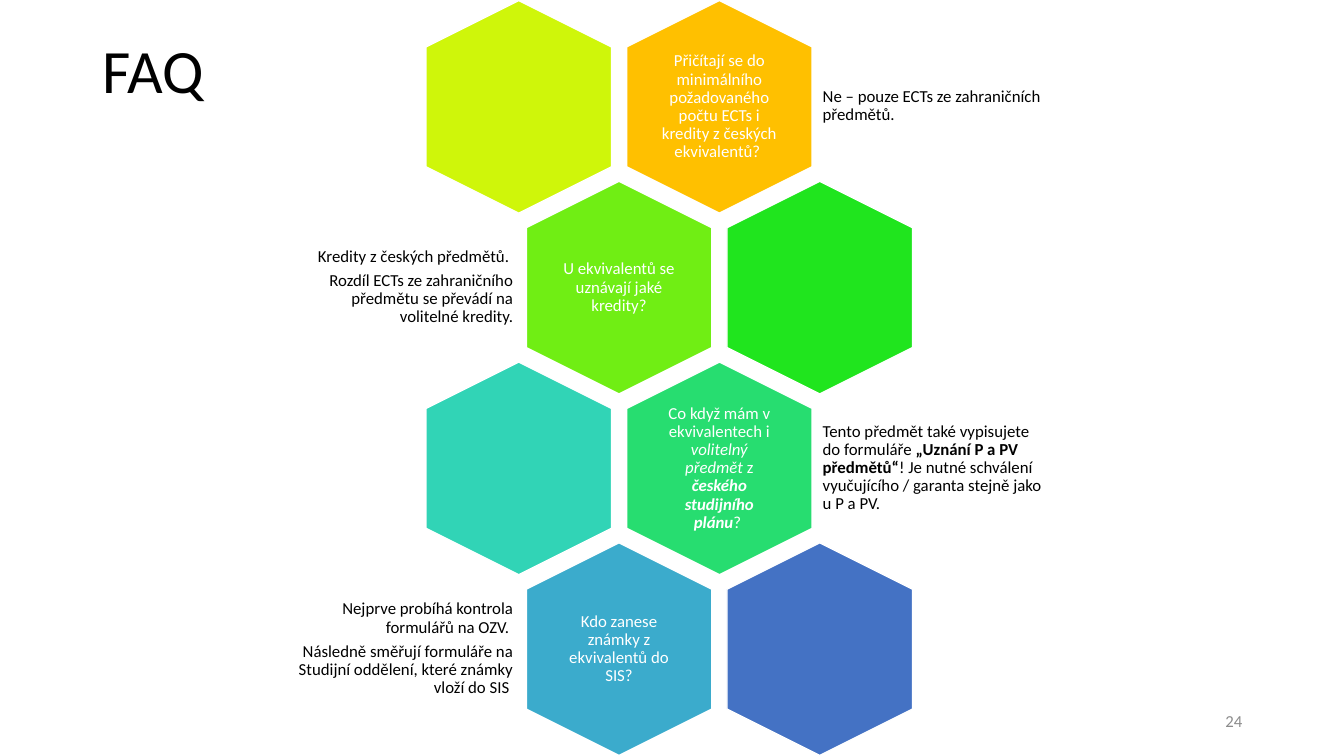
from dataclasses import dataclass

from pptx import Presentation
from pptx.dml.color import RGBColor
from pptx.enum.shapes import MSO_SHAPE
from pptx.enum.text import MSO_ANCHOR, PP_ALIGN
from pptx.slide import Slide
from pptx.util import Inches, Pt

# Colours
BLACK = RGBColor(0x00, 0x00, 0x00)
WHITE = RGBColor(0xFF, 0xFF, 0xFF)
GREY = RGBColor(0x8C, 0x8C, 0x8C)
AMBER = RGBColor(0xFF, 0xC0, 0x00)
YELLOW = RGBColor(0xCF, 0xF6, 0x0A)
LIME = RGBColor(0x70, 0xEE, 0x14)
GREEN = RGBColor(0x20, 0xE5, 0x1E)
EMERALD = RGBColor(0x27, 0xDD, 0x70)
TURQUOISE = RGBColor(0x31, 0xD4, 0xB6)
SKY = RGBColor(0x3B, 0xAB, 0xCC)
BLUE = RGBColor(0x44, 0x72, 0xC4)

# Honeycomb measures in inches
HEXAGON_WIDTH, HEXAGON_HEIGHT = 2.11, 1.84
FIRST_LEFT, FIRST_TOP, LAST_TOP = 4.09, 0.14, 5.52
COLUMN_STEP = 1.99
ROW_SHIFT = COLUMN_STEP / 2


@dataclass
class Run:
    text: str
    bold: bool = False
    italic: bool = False


@dataclass
class Box:
    left: float
    top: float
    width: float
    height: float


@dataclass
class TextStyle:
    size: float = 12
    color: RGBColor = BLACK
    alignment: PP_ALIGN = PP_ALIGN.LEFT
    line_spacing: float = 0.9
    space_after: float = 4.2
    margin_x: float = 0.05
    margin_y: float = 0.05


@dataclass
class Row:
    question: list[Run]
    answer: list[list[Run]]
    question_color: RGBColor
    empty_color: RGBColor


ROWS = [
    Row(
        [Run("Přičítají se do minimálního požadovaného počtu ECTs i kredity z českých ekvivalentů? ")],
        [[Run("Ne – pouze ECTs ze zahraničních předmětů.")]],
        AMBER, YELLOW,
    ),
    Row(
        [Run("U ekvivalentů se uznávají jaké kredity?")],
        [
            [Run("Kredity z českých předmětů. ")],
            [Run("Rozdíl ECTs ze zahraničního předmětu se převádí na volitelné kredity.")],
        ],
        LIME, GREEN,
    ),
    Row(
        [
            Run("Co když mám v ekvivalentech i "),
            Run("volitelný předmět ", italic=True),
            Run("z "),
            Run("českého studijního plánu", bold=True, italic=True),
            Run("? "),
        ],
        [[
            Run("Tento předmět také vypisujete do formuláře "),
            Run("„Uznání P a PV předmětů“", bold=True),
            Run("! Je nutné schválení vyučujícího / garanta stejně jako u P a PV."),
        ]],
        EMERALD, TURQUOISE,
    ),
    Row(
        [Run("Kdo zanese známky z ekvivalentů do SIS?")],
        [
            [Run("Nejprve probíhá kontrola formulářů na OZV. ")],
            [Run("Následně směřují formuláře na Studijní oddělení, které známky vloží do SIS ")],
        ],
        SKY, BLUE,
    ),
]


def set_attributes(target: object, values: dict[str, object]) -> None:
    for name, value in values.items():
        setattr(target, name, value)


def add_text(slide: Slide, box: Box, paragraphs: list[list[Run]], style: TextStyle) -> None:
    shape = slide.shapes.add_textbox(
        Inches(box.left), Inches(box.top), Inches(box.width), Inches(box.height))
    frame = shape.text_frame
    set_attributes(frame, {
        "word_wrap": True,
        "vertical_anchor": MSO_ANCHOR.MIDDLE,
        "margin_left": Inches(style.margin_x),
        "margin_right": Inches(style.margin_x),
        "margin_top": Inches(style.margin_y),
        "margin_bottom": Inches(style.margin_y),
    })
    for index, runs in enumerate(paragraphs):
        paragraph = frame.add_paragraph() if index else frame.paragraphs[0]
        set_attributes(paragraph, {
            "alignment": style.alignment,
            "line_spacing": style.line_spacing,
            "space_after": Pt(style.space_after),
        })
        for item in runs:
            run = paragraph.add_run()
            run.text = item.text
            set_attributes(run.font, {
                "name": "Calibri", "size": Pt(style.size),
                "bold": item.bold, "italic": item.italic,
            })
            run.font.color.rgb = style.color


def add_hexagon(slide: Slide, left: float, top: float, color: RGBColor) -> None:
    shape = slide.shapes.add_shape(
        MSO_SHAPE.HEXAGON, Inches(left), Inches(top),
        Inches(HEXAGON_WIDTH), Inches(HEXAGON_HEIGHT))
    shape.rotation = 90
    shape.adjustments[0] = 0.25
    shape.shadow.inherit = False
    shape.fill.solid()
    shape.fill.fore_color.rgb = color
    shape.line.color.rgb = WHITE
    shape.line.width = Pt(1)


def add_row(slide: Slide, index: int, row: Row) -> None:
    # Odd rows shift right, and their answer moves to the left side
    shifted = index % 2 == 1
    top = FIRST_TOP + index * (LAST_TOP - FIRST_TOP) / (len(ROWS) - 1)
    left = FIRST_LEFT + ROW_SHIFT * shifted
    right = left + COLUMN_STEP
    question_left, empty_left = (left, right) if shifted else (right, left)
    add_hexagon(slide, question_left, top, row.question_color)
    add_hexagon(slide, empty_left, top, row.empty_color)

    add_text(slide, Box(question_left + 0.42, top + 0.19, 1.27, 1.46), [row.question],
             TextStyle(color=WHITE, alignment=PP_ALIGN.CENTER))
    answer_left, answer_width = (2.86, 2.28) if shifted else (8.11, 2.36)
    add_text(slide, Box(answer_left, top + 0.28, answer_width, 1.27), row.answer,
             TextStyle(alignment=PP_ALIGN.RIGHT if shifted else PP_ALIGN.LEFT))


def main() -> None:
    presentation = Presentation()
    presentation.slide_width = Inches(13.33)
    presentation.slide_height = Inches(7.5)
    slide = presentation.slides.add_slide(presentation.slide_layouts[6])

    # Title
    add_text(slide, Box(0.92, 0, 11.5, 1.45), [[Run("FAQ")]],
             TextStyle(size=44, space_after=0, margin_x=0.1))

    # Questions and answers
    for index, row in enumerate(ROWS):
        add_row(slide, index, row)

    # Slide number
    add_text(slide, Box(9.42, 6.95, 3, 0.4), [[Run("24")]],
             TextStyle(color=GREY, alignment=PP_ALIGN.RIGHT, line_spacing=1,
                       space_after=0, margin_x=0.1))
    presentation.save("out.pptx")


if __name__ == "__main__":
    main()
